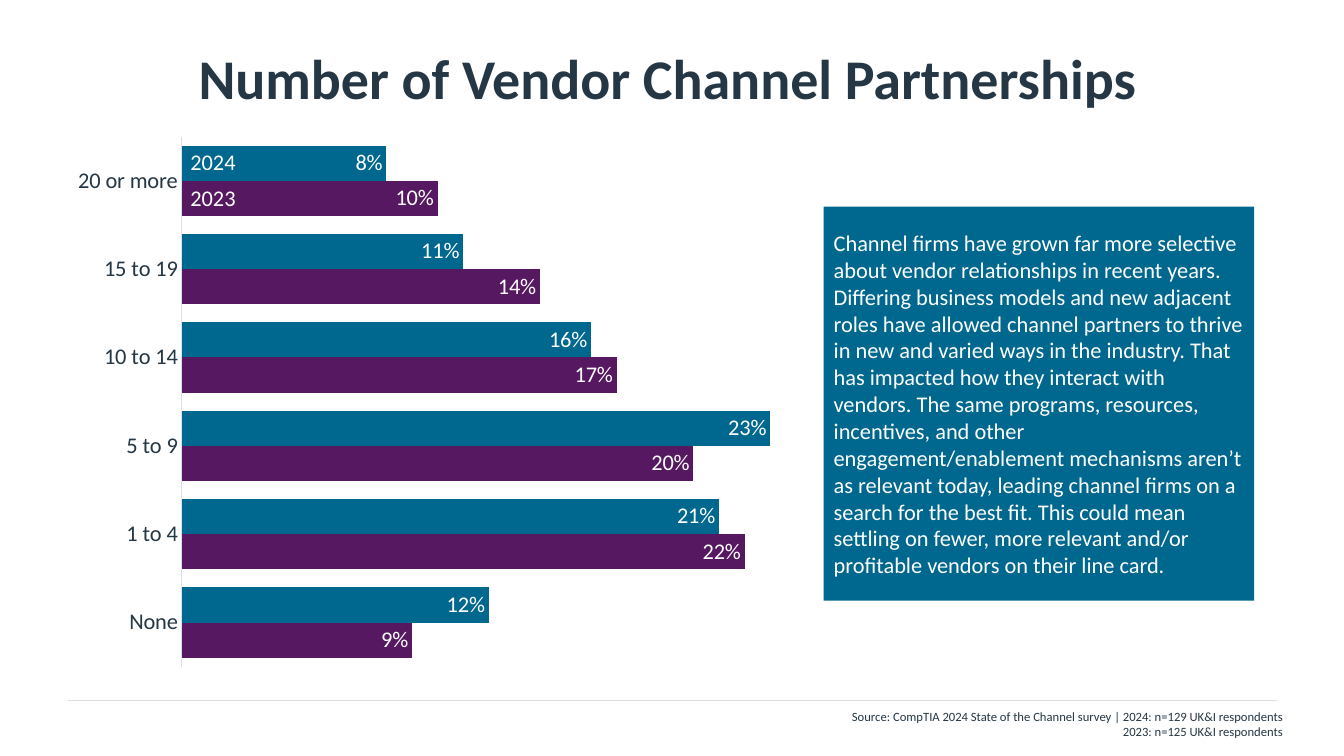
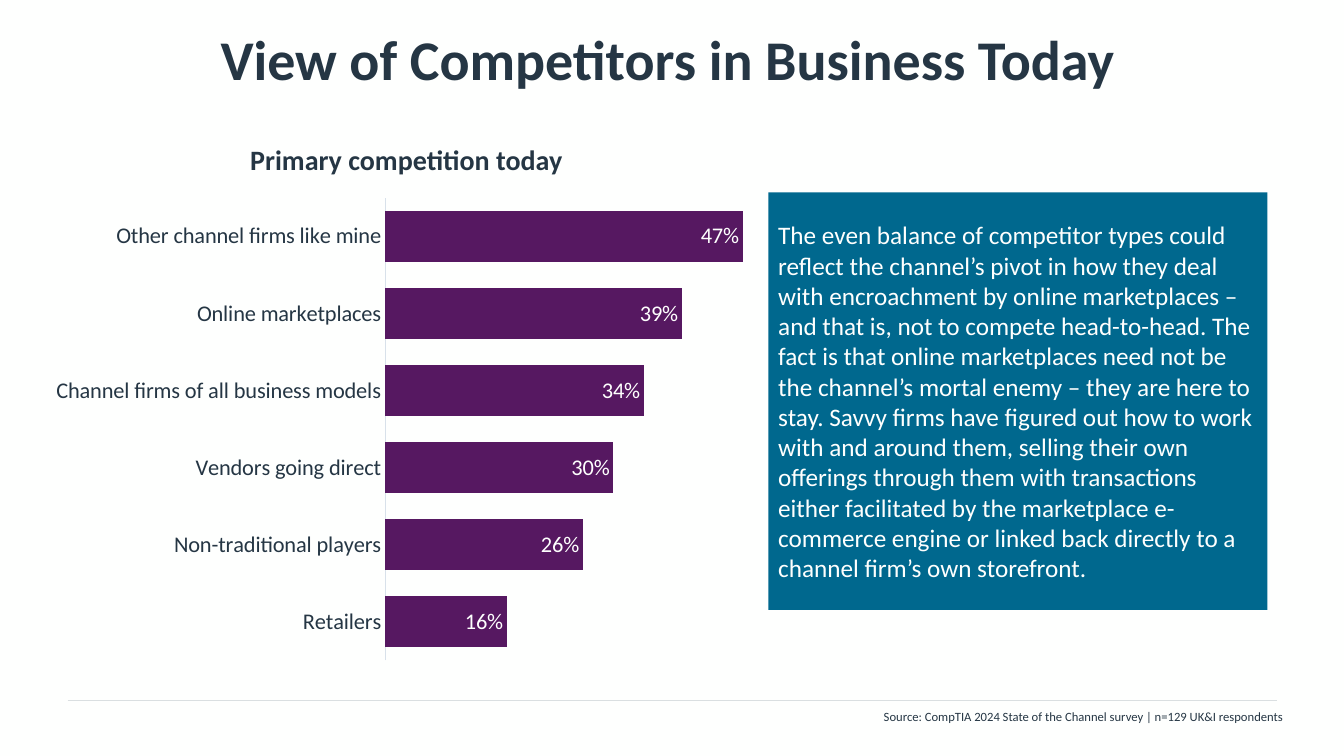
from dataclasses import dataclass
from typing import Any, NamedTuple

import pptx
import pptx.chart.chart
import pptx.chart.data
import pptx.dml.color
import pptx.enum.chart
import pptx.enum.shapes
import pptx.enum.text
import pptx.oxml
import pptx.oxml.ns
import pptx.slide
import pptx.text.text
import pptx.util

Inches = pptx.util.Inches
Pt = pptx.util.Pt
Align = pptx.enum.text.PP_ALIGN
Anchor = pptx.enum.text.MSO_ANCHOR
Fit = pptx.enum.text.MSO_AUTO_SIZE

HUES = {
    "paper": "FEFFFE",
    "ink": "253644",
    "teal": "00688E",
    "plum": "561861",
    "rule": "DADFE1",
    "axis": "D8E1EA",
}
FONT = "Calibri"
HEAD = {"margin_left": 0, "vertical_anchor": Anchor.MIDDLE,
        "word_wrap": True, "auto_size": Fit.NONE}
NOTE = {"word_wrap": True, "auto_size": Fit.SHAPE_TO_FIT_TEXT}
TAG = {"word_wrap": False, "auto_size": Fit.SHAPE_TO_FIT_TEXT}
PANEL = {"word_wrap": True, "vertical_anchor": Anchor.MIDDLE}


class Box(NamedTuple):
    left: float
    top: float
    width: float
    height: float

    def lengths(self) -> list[int]:
        return [Inches(side) for side in self]


class Bars(NamedTuple):
    name: str
    hue: str
    values: list[float]


@dataclass
class Graph:
    box: Box
    plot: Box  # shares of the chart area
    top: float
    names: list[str]
    bars: list[Bars]


@dataclass
class Label:
    box: Box
    text: str
    size: int
    hue: str = "ink"
    bold: bool = False
    align: Any = Align.LEFT
    after: int = 0


@dataclass
class Page:
    title: Label
    source: Label
    graph: Graph
    panel: Label
    tags: list[Label]
    heads: list[Label]


# Shared tools
def color(hue: str) -> pptx.dml.color.RGBColor:
    return pptx.dml.color.RGBColor.from_string(HUES[hue])


def style(item: Any, values: dict[str, Any]) -> None:
    for key, value in values.items():
        setattr(item, key, value)


def set_font(font: pptx.text.text.Font, size: int, hue: str, bold: bool = False) -> None:
    style(font, {"name": FONT, "size": Pt(size), "bold": bold})
    font.color.rgb = color(hue)


def write(frame: pptx.text.text.TextFrame, label: Label, form: dict[str, Any]) -> None:
    style(frame, form)
    para = frame.paragraphs[0]
    para.text = label.text
    style(para, {"alignment": label.align, "space_after": Pt(label.after)})
    for run in para.runs:
        set_font(run.font, label.size, label.hue, label.bold)


def add_label(slide: pptx.slide.Slide, label: Label, form: dict[str, Any]) -> None:
    box = slide.shapes.add_textbox(*label.box.lengths())
    write(box.text_frame, label, form)


def add_title(slide: pptx.slide.Slide, label: Label) -> None:
    title = slide.shapes.title
    style(title, dict(zip(Box._fields, label.box.lengths())))
    write(title.text_frame, label, HEAD)


def add_panel(slide: pptx.slide.Slide, label: Label) -> None:
    kind = pptx.enum.shapes.MSO_SHAPE.RECTANGLE
    panel = slide.shapes.add_shape(kind, *label.box.lengths())
    panel.shadow.inherit = False
    panel.fill.solid()
    panel.fill.fore_color.rgb = color("teal")
    panel.line.fill.background()
    write(panel.text_frame, label, PANEL)


def add_rule(slide: pptx.slide.Slide) -> None:
    kind = pptx.enum.shapes.MSO_CONNECTOR.STRAIGHT
    ends = [Inches(side) for side in (0.67, 6.95, 12.67, 6.95)]
    rule = slide.shapes.add_connector(kind, *ends)
    rule.line.color.rgb = color("rule")
    rule.line.width = Pt(0.5)
    rule.element.spPr.append(pptx.oxml.parse_xml(
        f"<a:effectLst {pptx.oxml.ns.nsdecls('a')}/>"))


# Charts
def place_plot(chart: pptx.chart.chart.Chart, plot: Box) -> None:
    area = chart.element.xpath(".//c:plotArea")[0]
    for old in area.xpath("./c:layout"):
        area.remove(old)
    modes = '<c:layoutTarget val="inner"/><c:xMode val="edge"/><c:yMode val="edge"/>'
    sides = "".join(f'<c:{key} val="{val}"/>' for key, val in zip("xywh", plot))
    area.insert(0, pptx.oxml.parse_xml(
        f"<c:layout {pptx.oxml.ns.nsdecls('c')}>"
        f"<c:manualLayout>{modes}{sides}</c:manualLayout></c:layout>"))


def add_graph(slide: pptx.slide.Slide, graph: Graph) -> None:
    data = pptx.chart.data.CategoryChartData(number_format="0%")
    data.categories = graph.names
    for bars in graph.bars:
        data.add_series(bars.name, bars.values)
    kind = pptx.enum.chart.XL_CHART_TYPE.BAR_CLUSTERED
    chart = slide.shapes.add_chart(kind, *graph.box.lengths(), data).chart
    style(chart, {"has_title": False, "has_legend": False})
    set_font(chart.font, 10, "ink")
    place_plot(chart, graph.plot)

    none = pptx.enum.chart.XL_TICK_MARK.NONE
    names = chart.category_axis
    style(names, {"major_tick_mark": none, "minor_tick_mark": none,
                  "has_major_gridlines": False})
    set_font(names.tick_labels.font, 16, "ink")
    names.format.line.color.rgb = color("axis")
    names.format.line.width = Pt(0.75)
    style(chart.value_axis, {"minimum_scale": 0, "maximum_scale": graph.top,
                             "has_major_gridlines": False, "visible": False})

    style(chart.plots[0], {"gap_width": 51, "vary_by_categories": False})
    for bars, series in zip(graph.bars, chart.plots[0].series):
        series.format.fill.solid()
        series.format.fill.fore_color.rgb = color(bars.hue)
        marks = series.data_labels
        style(marks, {"show_value": True, "number_format": "0%",
                      "number_format_is_linked": False,
                      "position": pptx.enum.chart.XL_LABEL_POSITION.INSIDE_END})
        set_font(marks.font, 16, "paper")


# Content
def title(top: float, text: str) -> Label:
    return Label(Box(0.67, top, 12, 1.25), text, 40, bold=True, align=Align.CENTER)


def source(height: float, text: str) -> Label:
    return Label(Box(6.33, 6.98, 6.49, height), text, 9, align=Align.RIGHT)


def panel(box: Box, size: int, text: str) -> Label:
    return Label(box, text, size, "paper", after=10)


PAGES = [
    Page(
        title(0.14, "Number of Vendor Channel Partnerships"),
        source(0.4, "Source: CompTIA 2024 State of the Channel survey | "
                    "2024: n=129 UK&I respondents\n2023: n=125 UK&I respondents"),
        Graph(
            Box(0.6, 1.35, 7.71, 5.27), Box(0.156, 0, 0.823, 1), 0.25,
            ["None", "1 to 4", "5 to 9", "10 to 14", "15 to 19", "20 or more"],
            [Bars("2023", "plum", [0.09, 0.22, 0.2, 0.17, 0.14, 0.1]),
             Bars("2024", "teal", [0.12, 0.21, 0.23, 0.16, 0.11, 0.08])],
        ),
        panel(Box(8.17, 2.05, 4.27, 3.91), 16,
              "Channel firms have grown far more selective about vendor "
              "relationships in recent years. Differing business models and new "
              "adjacent roles have allowed channel partners to thrive in new and "
              "varied ways in the industry. That has impacted how they interact "
              "with vendors. The same programs, resources, incentives, and other "
              "engagement/enablement mechanisms aren’t as relevant today, leading "
              "channel firms on a search for the best fit. This could mean "
              "settling on fewer, more relevant and/or profitable vendors on "
              "their line card."),
        [Label(Box(1.79, 1.42 + 0.36 * row, 0.66, 0.37), year, 16, "paper")
         for row, year in enumerate(["2024", "2023"])],
        [],
    ),
    Page(
        title(-0.05, "View of Competitors in Business Today"),
        source(0.25, "Source: CompTIA 2024 State of the Channel survey | "
                     "n=129 UK&I respondents"),
        Graph(
            Box(0.31, 1.96, 7.21, 4.83), Box(0.487, 0, 0.513, 0.951), 0.49,
            ["Retailers", "Non-traditional players", "Vendors going direct",
             "Channel firms of all business models", "Online marketplaces",
             "Other channel firms like mine"],
            [Bars("Today", "plum", [0.16, 0.26, 0.3, 0.34, 0.39, 0.47])],
        ),
        panel(Box(7.62, 1.91, 4.95, 4.14), 18,
              "The even balance of competitor types could reflect the channel’s "
              "pivot in how they deal with encroachment by online marketplaces – "
              "and that is, not to compete head-to-head. The fact is that online "
              "marketplaces need not be the channel’s mortal enemy – they are "
              "here to stay. Savvy firms have figured out how to work with and "
              "around them, selling their own offerings through them with "
              "transactions either facilitated by the marketplace e-commerce "
              "engine or linked back directly to a channel firm’s own storefront."),
        [],
        [Label(Box(1.08, 0.96, 6, 1.25), "Primary competition today", 20,
               bold=True, align=Align.CENTER)],
    ),
]


def add_page(deck: Any, page: Page) -> None:
    slide = deck.slides.add_slide(deck.slide_layouts.get_by_name("Title Only"))
    add_rule(slide)
    add_title(slide, page.title)
    add_graph(slide, page.graph)
    add_label(slide, page.source, NOTE)
    for tag in page.tags:
        add_label(slide, tag, TAG)
    for head in page.heads:
        add_label(slide, head, HEAD)
    add_panel(slide, page.panel)


def main() -> None:
    deck = pptx.Presentation()
    style(deck, {"slide_width": Inches(13.33), "slide_height": Inches(7.5)})
    back = deck.slide_master.background.fill
    back.solid()
    back.fore_color.rgb = color("paper")
    for page in PAGES:
        add_page(deck, page)
    deck.save("out.pptx")


if __name__ == "__main__":
    main()
